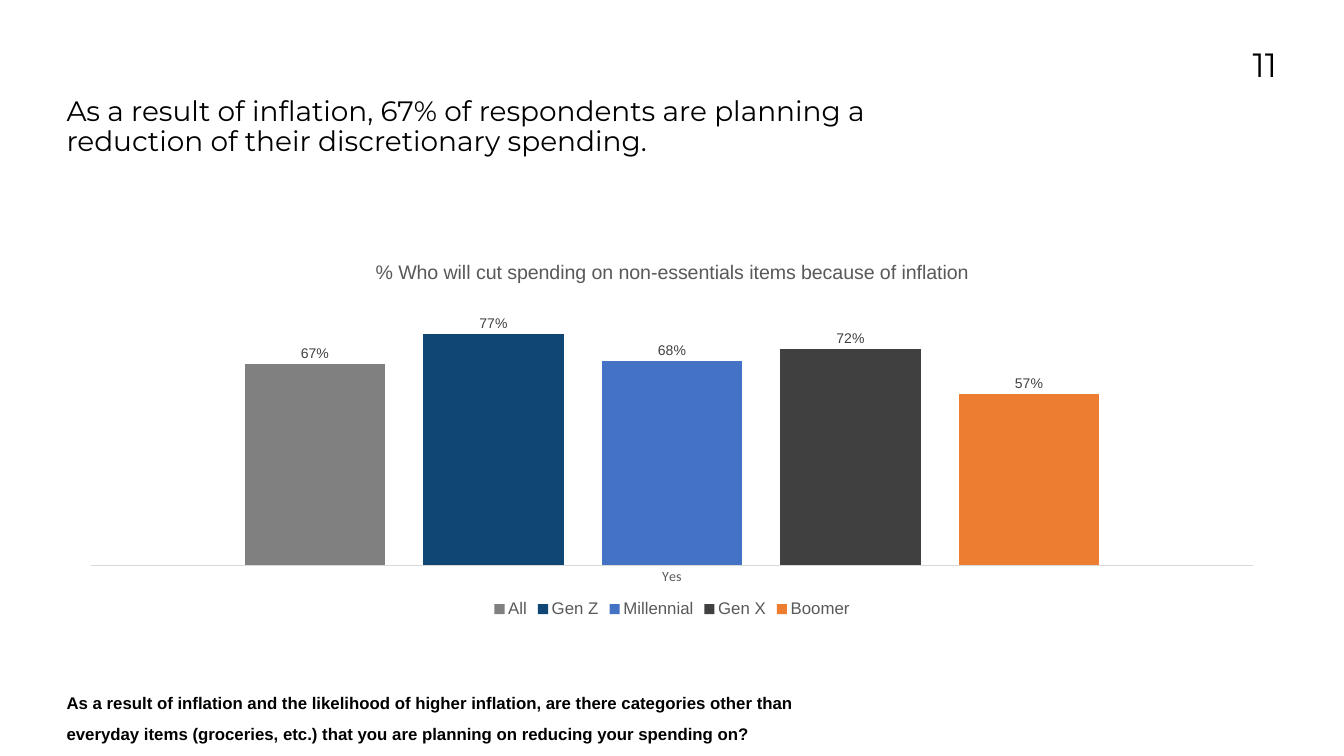
from pptx import Presentation, util as u
from pptx.chart.data import CategoryChartData
from pptx.dml.color import RGBColor
from pptx.enum import chart as charts, text
from pptx.oxml import parse_xml
from pptx.oxml.ns import nsdecls

SCALE = 9144


def px(*lengths):
    return [u.Emu(length * SCALE) for length in lengths]


def style(font, name, size, color, bold=False):
    values = {"name": name, "size": u.Pt(size), "bold": bold}
    for key, value in values.items():
        setattr(font, key, value)
    font.color.rgb = RGBColor.from_string(color)


presentation = Presentation()
presentation.slide_width, presentation.slide_height = px(2667, 1500)
slide = presentation.slides.add_slide(presentation.slide_layouts[6])

survey = CategoryChartData(number_format="0%")
survey.categories = ["Yes"]
generations = [
    ("All", 0.67, "808080"),
    ("Gen Z", 0.77, "104674"),
    ("Millennial", 0.68, "4472C4"),
    ("Gen X", 0.72, "404040"),
    ("Boomer", 0.57, "ED7D31"),
]
for name, share, color in generations:
    survey.add_series(name, [share])
chart = slide.shapes.add_chart(
    charts.XL_CHART_TYPE.COLUMN_CLUSTERED, *px(132, 488, 2403, 746), survey
).chart
style(chart.font, "Calibri", 10, "000000")

chart.has_title = True
chart.chart_title.include_in_layout = False
title = chart.chart_title.text_frame.paragraphs[0]
title.text = "% Who will cut spending on non-essentials items because of inflation"
style(title.runs[0].font, "Arial", 28, "595959")

chart.has_legend = True
chart.legend.position = charts.XL_LEGEND_POSITION.BOTTOM
chart.legend.include_in_layout = False
style(chart.legend.font, "Arial", 24, "595959")

category_axis = chart.category_axis
category_axis.major_tick_mark = charts.XL_TICK_MARK.NONE
category_axis.format.line.color.rgb = RGBColor.from_string("D9D9D9")
category_axis.format.line.width = u.Pt(0.75)
style(category_axis.tick_labels.font, "Calibri", 20, "595959")

axis_values = {
    "visible": False,
    "has_major_gridlines": False,
    "minimum_scale": 0,
    "maximum_scale": 0.9,
}
for key, value in axis_values.items():
    setattr(chart.value_axis, key, value)

plot = chart.plots[0]
plot_values = {"gap_width": 219, "overlap": -27, "vary_by_categories": False}
for key, value in plot_values.items():
    setattr(plot, key, value)
for series, (name, share, color) in zip(plot.series, generations):
    series.format.fill.solid()
    series.format.fill.fore_color.rgb = RGBColor.from_string(color)
    labels = series.data_labels
    label_values = {
        "show_value": True,
        "number_format": "0%",
        "number_format_is_linked": False,
        "position": charts.XL_LABEL_POSITION.OUTSIDE_END,
    }
    for key, value in label_values.items():
        setattr(labels, key, value)
    style(labels.font, "Arial", 20, "404040")

plot_area = chart._chartSpace.chart.plotArea
for layout in plot_area.findall("{*}layout"):
    plot_area.remove(layout)
plot_area.insert(0, parse_xml(
    f'<c:layout {nsdecls("c")}><c:manualLayout><c:layoutTarget val="inner"/>'
    '<c:xMode val="edge"/><c:yMode val="edge"/><c:x val="0.02"/>'
    '<c:y val="0.13"/><c:w val="0.96"/><c:h val="0.72"/>'
    '</c:manualLayout></c:layout>'
))

left, right = text.PP_ALIGN.LEFT, text.PP_ALIGN.RIGHT
headline = (
    "As a result of inflation, 67% of respondents are planning a "
    "reduction of their discretionary spending."
)
question = (
    "As a result of inflation and the likelihood of higher inflation, are there "
    "categories other than everyday items (groceries, etc.) that you are "
    "planning on reducing your spending on?"
)
text_boxes = [
    ("11", (2309, 88, 225, 164), "Montserrat", 48, False, right, 1.0),
    (headline, (132, 193, 1601, 208), "Montserrat", 40, False, left, 0.9),
    (question, (132, 1355, 1460, 69), "Arial", 24, True, left, 1.5),
]
for words, place, font_name, size, bold, alignment, spacing in text_boxes:
    frame = slide.shapes.add_textbox(*px(*place)).text_frame
    frame.word_wrap = True
    for side in ("left", "top", "right", "bottom"):
        setattr(frame, f"margin_{side}", 0)
    paragraph = frame.paragraphs[0]
    paragraph.text = words
    paragraph.alignment = alignment
    paragraph.line_spacing = spacing
    style(paragraph.runs[0].font, font_name, size, "000000", bold)

presentation.save("out.pptx")
